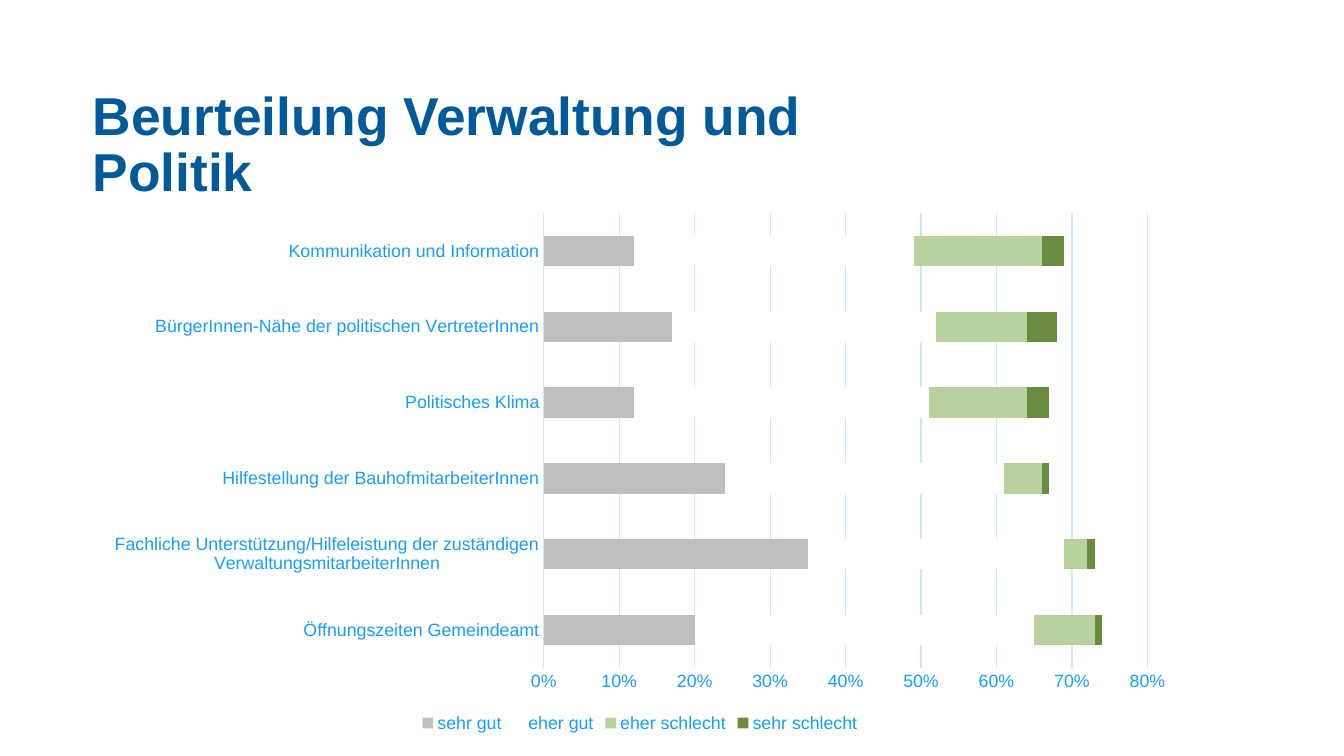
from pptx import Presentation
from pptx.chart.data import CategoryChartData
from pptx.dml.color import RGBColor
from pptx.enum.chart import XL_CHART_TYPE, XL_LEGEND_POSITION, XL_TICK_MARK
from pptx.enum.text import MSO_ANCHOR, MSO_AUTO_SIZE, PP_ALIGN
from pptx.util import Inches, Pt

NAVY = RGBColor(0x00, 0x5A, 0x99)
BLUE = RGBColor(0x18, 0x9D, 0xFF)
PALE = RGBColor(0xCA, 0xE8, 0xFF)
GREY = RGBColor(0xBF, 0xBF, 0xBF)
WHITE = RGBColor(0xFF, 0xFF, 0xFF)
LIGHT = RGBColor(0xB9, 0xD1, 0x9E)
GREEN = RGBColor(0x69, 0x8B, 0x42)

TITLE = "Beurteilung Verwaltung und Politik"
TOPICS = [
    "Öffnungszeiten Gemeindeamt",
    "Fachliche Unterstützung/Hilfeleistung der zuständigen VerwaltungsmitarbeiterInnen",
    "Hilfestellung der BauhofmitarbeiterInnen",
    "Politisches Klima",
    "BürgerInnen-Nähe der politischen VertreterInnen",
    "Kommunikation und Information",
]
GRADES = [
    ("sehr gut", GREY, (0.20, 0.35, 0.24, 0.12, 0.17, 0.12)),
    ("eher gut", WHITE, (0.45, 0.34, 0.37, 0.39, 0.35, 0.37)),
    ("eher schlecht", LIGHT, (0.08, 0.03, 0.05, 0.13, 0.12, 0.17)),
    ("sehr schlecht", GREEN, (0.01, 0.01, 0.01, 0.03, 0.04, 0.03)),
]


def style(font, size=12, color=BLUE, bold=False):
    font.name = "Arial"
    font.size = Pt(size)
    font.bold = bold
    font.color.rgb = color


def write(shape, text, spacing=None, **look):
    frame = shape.text_frame
    frame.margin_left = frame.margin_right = 0
    frame.margin_top = frame.margin_bottom = 0
    frame.word_wrap = True
    frame.auto_size = MSO_AUTO_SIZE.NONE
    frame.vertical_anchor = MSO_ANCHOR.TOP
    para = frame.paragraphs[0]
    para.alignment = PP_ALIGN.LEFT
    para.line_spacing = spacing
    run = para.add_run()
    run.text = text
    style(run.font, **look)


def rule(line):
    line.color.rgb = PALE
    line.width = Pt(0.75)


def plot(slide, left, top, width, height):
    data = CategoryChartData(number_format="0%")
    data.categories = TOPICS
    for name, _, shares in GRADES:
        data.add_series(name, shares)
    chart = slide.shapes.add_chart(
        XL_CHART_TYPE.BAR_STACKED, left, top, width, height, data
    ).chart
    style(chart.font, size=10, color=NAVY)
    chart.has_title = False

    bars = chart.plots[0]
    bars.gap_width = 150
    bars.overlap = 100
    bars.vary_by_categories = False
    for series, (_, color, _) in zip(bars.series, GRADES):
        series.format.fill.solid()
        series.format.fill.fore_color.rgb = color

    for axis in (chart.category_axis, chart.value_axis):
        axis.major_tick_mark = axis.minor_tick_mark = XL_TICK_MARK.NONE
        style(axis.tick_labels.font)
    rule(chart.category_axis.format.line)

    scale = chart.value_axis
    scale.minimum_scale = 0
    scale.maximum_scale = 0.8
    scale.major_unit = 0.1
    scale.tick_labels.number_format = "0%"
    scale.tick_labels.number_format_is_linked = False
    scale.format.line.fill.background()
    scale.has_major_gridlines = True
    rule(scale.major_gridlines.format.line)

    chart.has_legend = True
    chart.legend.position = XL_LEGEND_POSITION.BOTTOM
    chart.legend.include_in_layout = False
    style(chart.legend.font)


def main():
    deck = Presentation()
    deck.slide_width = Inches(12.6)
    deck.slide_height = Inches(7.09)
    slide = deck.slides.add_slide(deck.slide_layouts[5])
    left = Inches(0.87)

    title = slide.shapes.title
    title.left, title.top = left, Inches(0.84)
    title.width, title.height = Inches(7.7), Inches(1.07)
    write(title, TITLE, spacing=Pt(38), size=36, color=NAVY, bold=True)

    plot(slide, left, Inches(1.9), Inches(10.26), Inches(5.01))
    deck.save("out.pptx")


if __name__ == "__main__":
    main()
